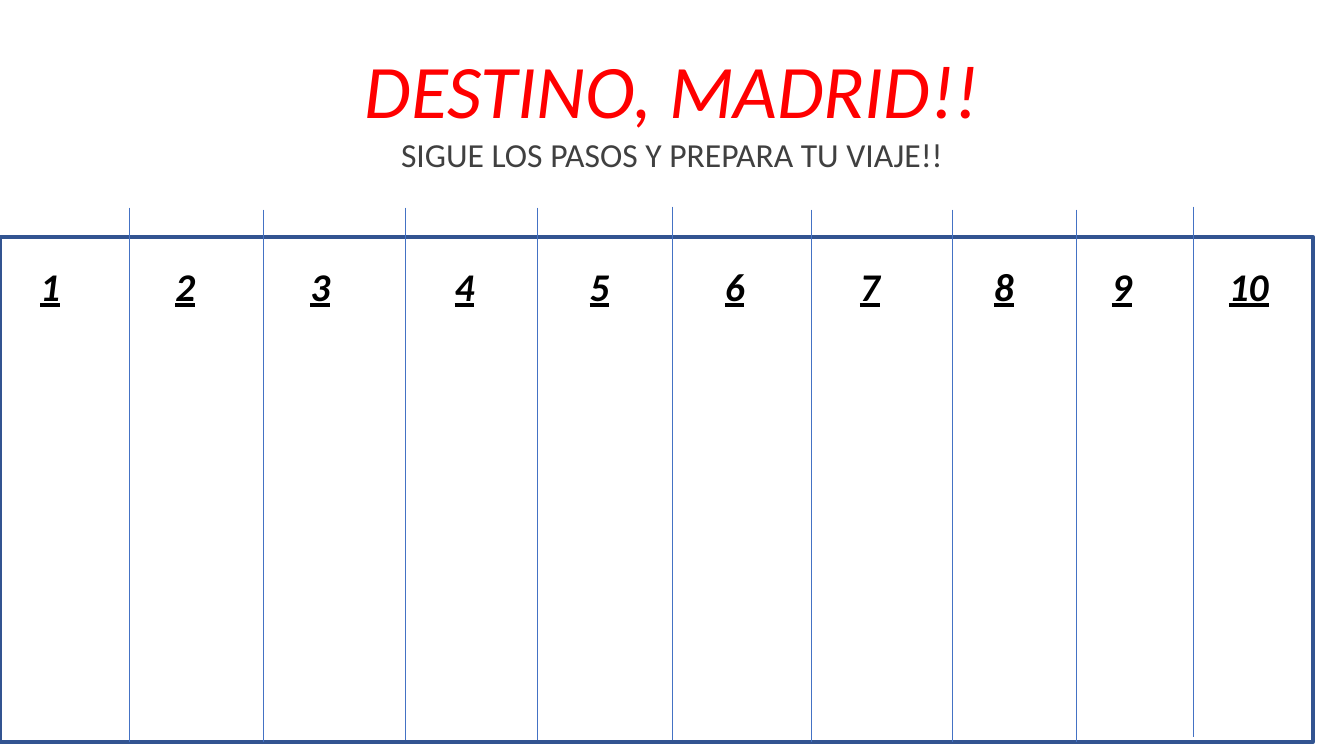
from lxml import etree
from pptx import Presentation
from pptx import util as u
from pptx.dml.color import RGBColor
from pptx.enum import shapes, text
from pptx.oxml.ns import qn

COLORS = {
    "title": "FF0000",
    "subtitle": "404040",
    "number": "000000",
    "panel": "FFFFFF",
    "border": "325491",
    "divider": "4472C4",
}
FONT = "Calibri"

# x, top and bottom of each line between two steps
DIVIDERS = [
    (1.28, 2.06, 7.36), (2.61, 2.08, 7.36), (4.02, 2.06, 7.34),
    (5.33, 2.06, 7.34), (6.67, 2.05, 7.34), (8.05, 2.08, 7.36),
    (9.45, 2.08, 7.36), (10.68, 2.08, 7.36), (11.84, 2.05, 7.31),
]
# Tab stops of steps 2 to 10, from the left edge of the text
STEP_TABS = [1.34, 2.68, 4.11, 5.45, 6.79, 8.13, 9.46, 10.63, 11.79]


def rgb(name):
    return RGBColor.from_string(COLORS[name])


def add_text(slide, box, runs, size, color, bold=False, italic=False,
             align=text.PP_ALIGN.LEFT, anchor=text.MSO_ANCHOR.TOP, spacing=None):
    """Add a one-paragraph text box; runs are (text, underlined) pairs."""
    sp = slide.shapes.add_textbox(*map(u.Inches, box))
    tf = sp.text_frame
    tf.word_wrap = True
    tf.vertical_anchor = anchor
    p = tf.paragraphs[0]
    p.alignment = align
    if spacing:
        p.line_spacing = spacing
    for content, underlined in runs:
        r = p.add_run()
        r.text = content
        f = r.font
        f.name, f.size, f.color.rgb = FONT, u.Pt(size), rgb(color)
        f.bold, f.italic, f.underline = bold, italic, underlined
    return p


def set_tabs(p, positions):
    tabs = etree.SubElement(p._p.get_or_add_pPr(), qn("a:tabLst"))
    for position in positions:
        etree.SubElement(tabs, qn("a:tab"), pos=str(u.Inches(position)), algn="l")


def add_panel(slide, box):
    sp = slide.shapes.add_shape(shapes.MSO_SHAPE.RECTANGLE, *map(u.Inches, box))
    sp.shadow.inherit = False
    sp.fill.solid()
    sp.fill.fore_color.rgb = rgb("panel")
    sp.line.color.rgb = rgb("border")
    sp.line.width = u.Pt(3)


def add_divider(slide, x, top, bottom):
    line = slide.shapes.add_connector(
        shapes.MSO_CONNECTOR.STRAIGHT, *map(u.Inches, (x, top, x, bottom)))
    line.line.color.rgb = rgb("divider")
    line.line.width = u.Pt(0.5)
    etree.SubElement(line._element.spPr, qn("a:effectLst"))


def add_step_numbers(slide, box):
    runs = [("1", True)]
    for number in range(2, len(STEP_TABS) + 2):
        runs += [("\t", False), (str(number), True)]
    p = add_text(slide, box, runs, 28, "number", bold=True, italic=True)
    set_tabs(p, STEP_TABS)


def main():
    prs = Presentation()
    prs.slide_width, prs.slide_height = u.Inches(13.33), u.Inches(7.5)
    s = prs.slides.add_slide(prs.slide_layouts[6])
    center = text.PP_ALIGN.CENTER
    add_text(s, (0.92, 0.35, 11.5, 1.16), [("DESTINO, MADRID!!", False)], 54, "title",
             italic=True, align=center, anchor=text.MSO_ANCHOR.MIDDLE, spacing=0.9)
    add_text(s, (2.61, 1.28, 8.11, 0.5), [("SIGUE LOS PASOS Y PREPARA TU VIAJE!!", False)],
             24, "subtitle", align=center)
    add_panel(s, (0, 2.35, 13.02, 5.01))
    for divider in DIVIDERS:
        add_divider(s, *divider)
    add_step_numbers(s, (0.3, 2.55, 12.56, 0.57))
    prs.save("out.pptx")


if __name__ == "__main__":
    main()
